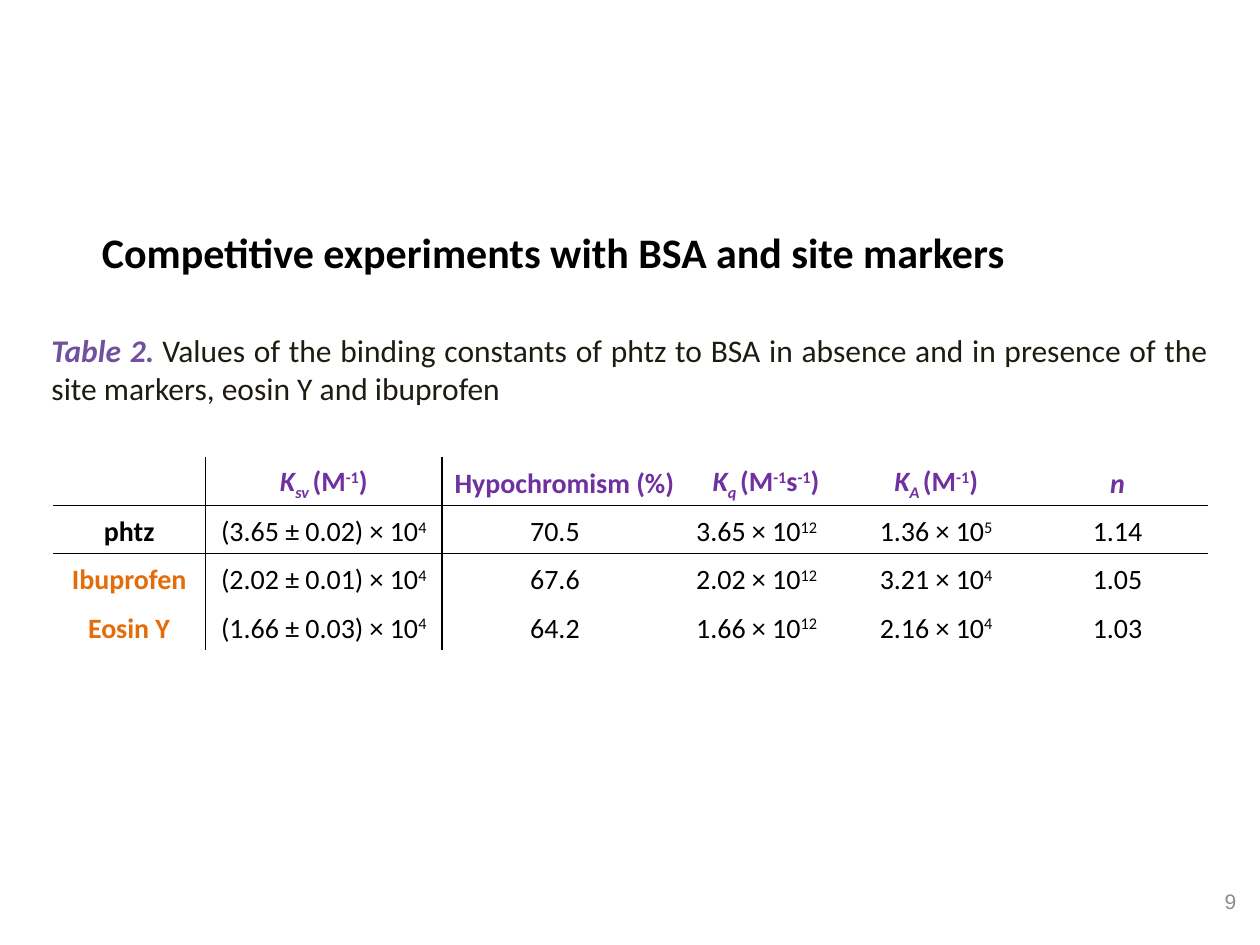
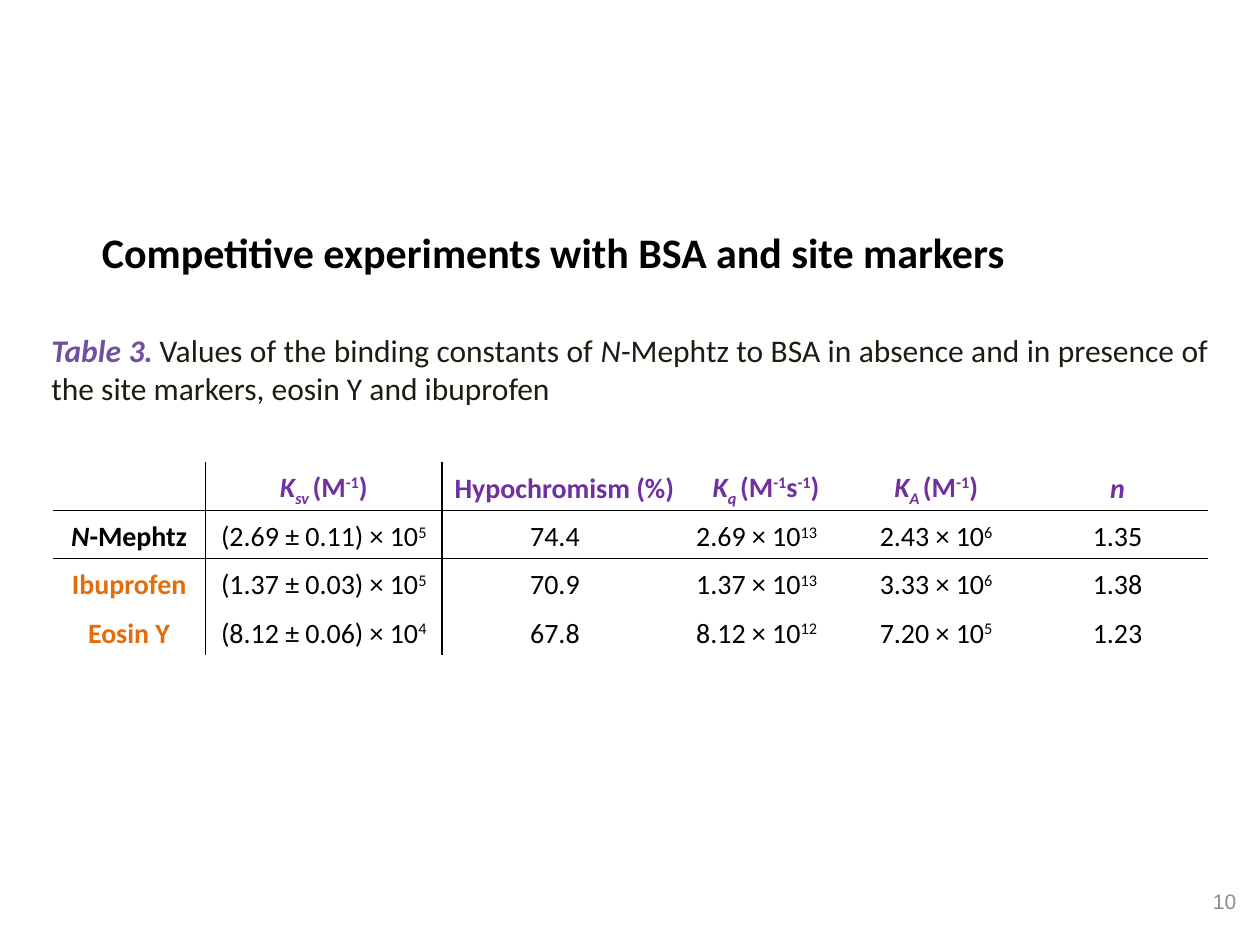
"""Builds two slides of binding constants for BSA competition experiments."""
import lxml.etree
import pptx
import pptx.dml.color
import pptx.enum.text
import pptx.oxml.ns
import pptx.util

WIDTH, HEIGHT = pptx.util.Inches(10), pptx.util.Inches(7.5)
COLORS = {"text": "000000", "heading": "7030A0", "marker": "E46C0A",
          "label": "71519F", "caption": "1E1C11", "number": "8C8C8C"}
COLUMNS = [12.1, 18.8, 17.9, 1.5, 12.6, 14.4, 14.4]
ROW_HEIGHT = 5.1
NO_STYLE = "{2D5ABB26-0587-4C30-8999-92F81FD0307C}"
SUB, SUP = -25000, 30000
ALIGN = pptx.enum.text.PP_ALIGN
MIDDLE = pptx.enum.text.MSO_ANCHOR.MIDDLE

TITLE = "Competitive experiments with BSA and site markers"
ITALIC, LOWER, UPPER = {"italic": True}, {"italic": True, "base": SUB}, {"base": SUP}
PER_MOLAR = [("(M", {}), ("-1", UPPER), (")", {})]
HEADINGS = {
    1: [("K", ITALIC), ("sv ", LOWER)] + PER_MOLAR,
    2: [("Hypochromism (%)", {})],
    4: [("K", ITALIC), ("q ", LOWER), ("(M", {}), ("-1", UPPER),
        ("s", {}), ("-1", UPPER), (")", {})],
    5: [("K", ITALIC), ("A ", LOWER)] + PER_MOLAR,
    6: [("n", ITALIC)],
}
SLIDES = [
    {"number": "9", "label": "Table 2.", "compound": [("phtz", {})], "top": 48.4,
     "rows": [("3.65 ± 0.02", 4, "70.5", "3.65", 12, "1.36", 5, "1.14"),
              ("2.02 ± 0.01", 4, "67.6", "2.02", 12, "3.21", 4, "1.05"),
              ("1.66 ± 0.03", 4, "64.2", "1.66", 12, "2.16", 4, "1.03")]},
    {"number": "10", "label": "Table 3.", "top": 48.93,
     "compound": [("N", ITALIC), ("-Mephtz", {})],
     "rows": [("2.69 ± 0.11", 5, "74.4", "2.69", 13, "2.43", 6, "1.35"),
              ("1.37 ± 0.03", 5, "70.9", "1.37", 13, "3.33", 6, "1.38"),
              ("8.12 ± 0.06", 4, "67.8", "8.12", 12, "7.20", 5, "1.23")]},
]


def across(percent):
    """Turn a percentage of the slide's width into a length."""
    return int(WIDTH * percent / 100)


def down(percent):
    """Turn a percentage of the slide's height into a length."""
    return int(HEIGHT * percent / 100)


def write(p, text, size=16, color="text", font="Calibri", bold=False,
          italic=False, base=0):
    """Add one formatted run to a paragraph."""
    r = p.add_run()
    r.text = text
    r.font.size = pptx.util.Pt(size)
    r.font.name = font
    r.font.bold, r.font.italic = bold, italic
    r.font.color.rgb = pptx.dml.color.RGBColor.from_string(COLORS[color])
    if base:
        r.font._element.set("baseline", str(base))


def add_text(s, x, y, w, h, align=ALIGN.LEFT):
    """Add a wrapping text box and return its text frame."""
    tf = s.shapes.add_textbox(across(x), down(y), across(w), down(h)).text_frame
    tf.word_wrap = True
    tf.paragraphs[0].alignment = align
    return tf


def add_border(cell, side):
    """Draw a one-point line on one side of a cell."""
    tag = pptx.oxml.ns.qn
    props = cell._tc.get_or_add_tcPr()
    line = lxml.etree.SubElement(props, tag("a:ln" + side), w=str(pptx.util.Pt(1)))
    fill = lxml.etree.SubElement(line, tag("a:solidFill"))
    lxml.etree.SubElement(fill, tag("a:srgbClr"), val=COLORS["text"])


def style_cell(cell, row, col):
    """Set the margins, anchor, rules and fill of a cell."""
    cell.margin_left = cell.margin_right = pptx.util.Inches(0.07)
    cell.margin_top = cell.margin_bottom = 0
    cell.vertical_anchor = MIDDLE
    rules = {"L": col == 1, "R": col == 0, "T": row == 1, "B": row == 0}
    for side, drawn in rules.items():
        if drawn:
            add_border(cell, side)
    cell.fill.background()


def fill_cell(cell, runs, **fmt):
    """Write centred runs into a cell."""
    p = cell.text_frame.paragraphs[0]
    p.alignment = ALIGN.CENTER
    p.line_spacing = 1.15
    p.space_after = pptx.util.Pt(10)
    for text, extra in runs:
        write(p, text, **fmt, **extra)


def power(value, exponent):
    """Return the runs of a value times a power of ten."""
    return [(f"{value} × 10", {}), (str(exponent), UPPER)]


def add_constants(s, top, compound, rows):
    """Add the table of binding constants."""
    frame = s.shapes.add_table(len(rows) + 1, len(COLUMNS), across(4.2), down(top),
                               across(sum(COLUMNS)), down(ROW_HEIGHT * (len(rows) + 1)))
    table = frame.table
    table.first_row = table.horz_banding = False
    table._tbl.tblPr.find(pptx.oxml.ns.qn("a:tableStyleId")).text = NO_STYLE
    for column, width in zip(table.columns, COLUMNS):
        column.width = across(width)
    for i, row in enumerate(table.rows):
        row.height = down(ROW_HEIGHT)
        for j, cell in enumerate(row.cells):
            style_cell(cell, i, j)
        first = 2 if i == 0 else 3
        table.cell(i, first).merge(table.cell(i, first + 1))
    for col, runs in HEADINGS.items():
        fill_cell(table.cell(0, col), runs, color="heading", bold=True)
    names = [compound, [("Ibuprofen", {})], [("Eosin Y", {})]]
    for i, (name, values) in enumerate(zip(names, rows), 1):
        ksv, ksv_exp, hypochromism, kq, kq_exp, ka, ka_exp, n = values
        fill_cell(table.cell(i, 0), name, bold=True,
                  color="text" if i == 1 else "marker")
        body = {1: power(f"({ksv})", ksv_exp), 2: [(hypochromism, {})],
                3: power(kq, kq_exp), 5: power(ka, ka_exp), 6: [(n, {})]}
        for col, runs in body.items():
            fill_cell(table.cell(i, col), runs)


def add_caption(s, label, compound):
    """Add the justified caption above the table."""
    p = add_text(s, 3.1, 34.4, 93.8, 9.47, ALIGN.JUSTIFY).paragraphs[0]
    write(p, label, size=18, color="label", bold=True, italic=True)
    write(p, " ", color="caption", italic=True)
    runs = [("Values of the binding constants of ", {}), *compound,
            (" to BSA in absence and in presence of the site markers, "
             "eosin Y and ibuprofen", {})]
    for text, extra in runs:
        write(p, text, size=18, color="caption", **extra)


def add_slide(prs, number, label, compound, top, rows):
    """Add a slide with its number, title, table and caption."""
    s = prs.slides.add_slide(prs.slide_layouts[6])
    tf = add_text(s, 75.8, 92.67, 23.3, 5.33, ALIGN.RIGHT)
    tf.vertical_anchor = MIDDLE
    write(tf.paragraphs[0], number, size=12, color="number", font="Arial")
    tf = add_text(s, 7.1, 23.33, 85.8, 6.67)
    write(tf.paragraphs[0], TITLE, size=24, bold=True)
    add_constants(s, top, compound, rows)
    add_caption(s, label, compound)


def main():
    """Build and save the presentation."""
    prs = pptx.Presentation()
    prs.slide_width, prs.slide_height = WIDTH, HEIGHT
    for content in SLIDES:
        add_slide(prs, **content)
    prs.save("out.pptx")


if __name__ == "__main__":
    main()
